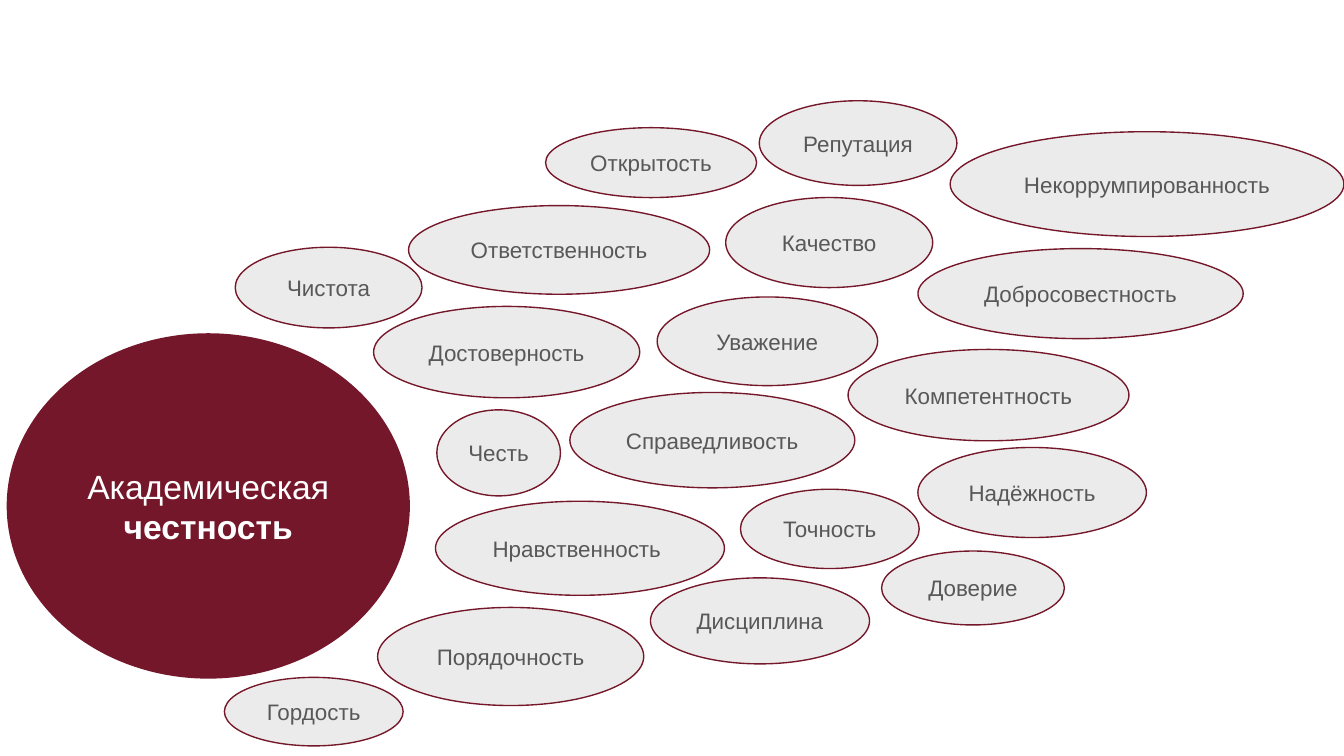
from dataclasses import dataclass

from pptx import Presentation
from pptx import util as u
from pptx.dml.color import RGBColor
from pptx.enum import shapes, text


@dataclass(frozen=True)
class Theme:
    """Colours, font and type sizes of the slide."""
    wine: RGBColor = RGBColor.from_string("75172A")
    pale: RGBColor = RGBColor.from_string("EBEBEB")
    grey: RGBColor = RGBColor.from_string("585858")
    white: RGBColor = RGBColor.from_string("FFFFFF")
    font: str = "Arial"
    core_size: int = 18
    value_size: int = 12
    outline: float = 0.75


THEME = Theme()

VALUES = [
    ("Честь", 3.25, 3.05, 0.92, 0.64),
    ("Достоверность", 2.78, 2.28, 1.98, 0.68),
    ("Дисциплина", 4.84, 4.3, 1.63, 0.64),
    ("Доверие", 6.56, 4.1, 1.36, 0.55),
    ("Порядочность", 2.81, 4.52, 1.98, 0.73),
    ("Гордость", 1.67, 5.04, 1.33, 0.51),
    ("Чистота", 1.75, 1.84, 1.39, 0.6),
    ("Уважение", 4.89, 2.21, 1.64, 0.66),
    ("Нравственность ", 3.24, 3.73, 2.15, 0.7),
    ("Справедливость", 4.24, 2.92, 2.12, 0.71),
    ("Компетентность", 6.31, 2.6, 2.09, 0.68),
    ("Точность", 5.51, 3.64, 1.33, 0.59),
    ("Надёжность", 6.83, 3.33, 1.7, 0.67),
    ("Ответственность", 3.04, 1.53, 2.24, 0.66),
    ("Качество", 5.4, 1.47, 1.54, 0.67),
    ("Некоррумпированность", 7.07, 0.98, 2.93, 0.78),
    ("Добросовестность", 6.83, 1.85, 2.42, 0.67),
    ("Открытость", 4.06, 0.95, 1.57, 0.52),
    ("Репутация", 5.65, 0.75, 1.47, 0.63),
]


def add_ellipse(slide, label, box, fill, color, size):
    """Add a filled ellipse with a centred label."""
    shape = slide.shapes.add_shape(
        shapes.MSO_SHAPE.OVAL, *(u.Inches(length) for length in box))
    shape.shadow.inherit = False
    shape.fill.solid()
    shape.fill.fore_color.rgb = fill
    frame = shape.text_frame
    frame.margin_left = frame.margin_right = 0
    frame.word_wrap = True
    frame.vertical_anchor = text.MSO_ANCHOR.MIDDLE
    frame.text = label
    paragraph = frame.paragraphs[0]
    paragraph.alignment = text.PP_ALIGN.CENTER
    for run in paragraph.runs:
        style_run(run, color, size)
    return shape


def style_run(run, color, size, bold=None):
    """Set the font of a run."""
    run.font.name = THEME.font
    run.font.size = u.Pt(size)
    run.font.color.rgb = color
    run.font.bold = bold


def add_core(slide):
    """Add the large ellipse that names the central idea."""
    shape = add_ellipse(slide, "Академическая", (0.05, 2.48, 3, 2.57),
                        THEME.wine, THEME.white, THEME.core_size)
    shape.line.fill.background()
    run = shape.text_frame.paragraphs[0].add_run()
    run.text = " честность"
    style_run(run, THEME.white, THEME.core_size, bold=True)


def add_value(slide, label, *box):
    """Add a small outlined ellipse that names one value."""
    shape = add_ellipse(slide, label, box, THEME.pale, THEME.grey,
                        THEME.value_size)
    shape.line.color.rgb = THEME.wine
    shape.line.width = u.Pt(THEME.outline)


def main():
    """Build and save the slide in 16:9 format."""
    presentation = Presentation()
    presentation.slide_width = u.Inches(10)
    presentation.slide_height = u.Inches(10 * 9 / 16)
    slide = presentation.slides.add_slide(presentation.slide_layouts[6])
    slide.background.fill.solid()
    slide.background.fill.fore_color.rgb = THEME.white
    add_core(slide)
    for value in VALUES:
        add_value(slide, *value)
    presentation.save("out.pptx")


if __name__ == "__main__":
    main()
